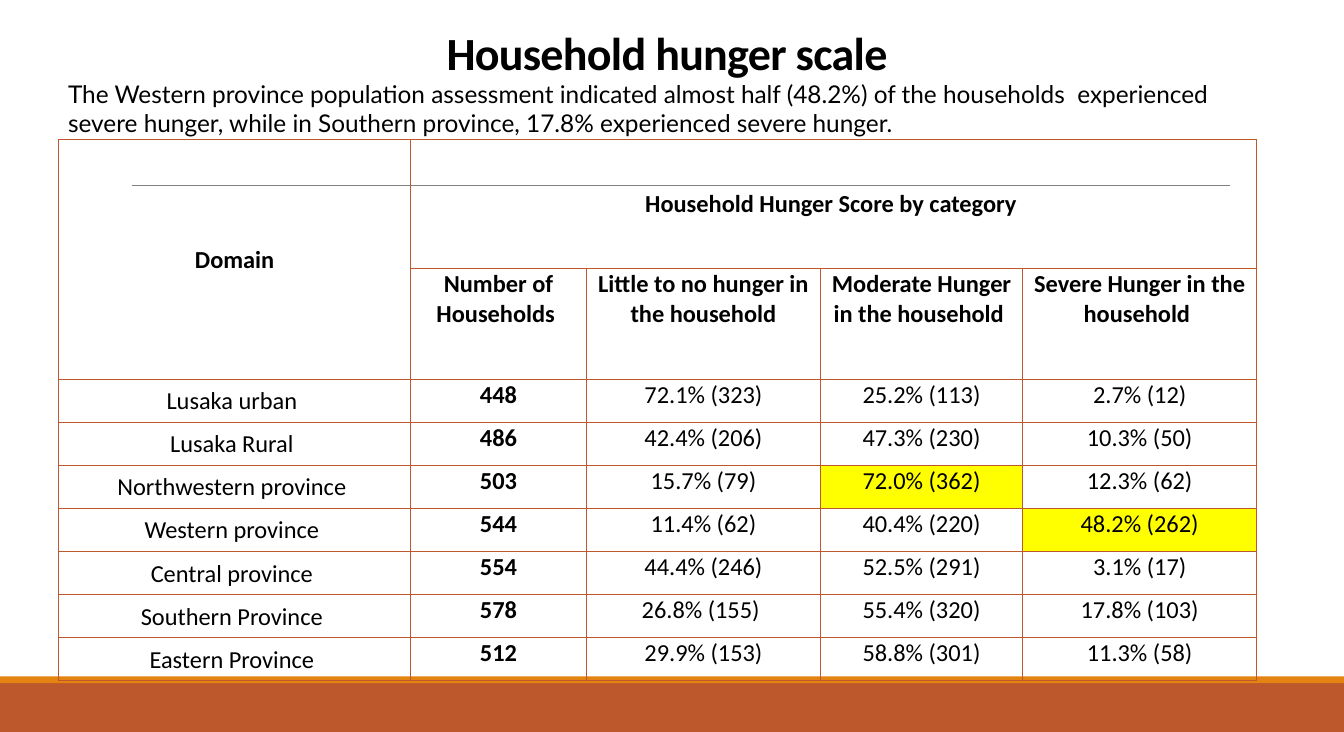
import pptx
import pptx.dml.color
import pptx.enum.shapes
import pptx.enum.text
import pptx.oxml
import pptx.oxml.ns
import pptx.util

Pt = pptx.util.Pt
ALIGN = pptx.enum.text.PP_ALIGN
ANCHOR = pptx.enum.text.MSO_ANCHOR
SHAPE = pptx.enum.shapes.MSO_SHAPE
LINK = pptx.enum.shapes.MSO_CONNECTOR

WIDTH, HEIGHT = 992.13, 540
COLORS = {"rust": "BD582C", "orange": "E48312", "gray": "808080",
          "black": "000000", "mark": "FFFF00"}
COLS = [260, 129.6, 173, 149, 173]
ROWS = [95, 82] + [31.75] * 7
HEADS = ["Number of Households ", "Little to no hunger in the household",
         "Moderate Hunger in the household ", "Severe Hunger in the household "]
DATA = [
    ("Lusaka urban ", "448", "72.1% (323)", "25.2% (113)", "2.7% (12)"),
    ("Lusaka Rural ", "486", "42.4% (206)", "47.3% (230)", "10.3% (50)"),
    ("Northwestern province ", "503", "15.7% (79)", "72.0% (362)", "12.3% (62)"),
    ("Western province ", "544", "11.4% (62)", "40.4% (220)", "48.2% (262)"),
    ("Central province ", "554", "44.4% (246)", "52.5% (291)", "3.1% (17)"),
    ("Southern Province ", "578", "26.8% (155) ", "55.4% (320)", "17.8% (103)"),
    ("Eastern Province ", "512", "29.9% (153)", "58.8% (301)", "11.3% (58)"),
]
MARKED = {"72.0% (362)", "48.2% (262)"}
SUMMARY = ("The Western province population assessment indicated almost half "
           "(48.2%) of the households  experienced severe hunger, while in "
           "Southern province, 17.8% experienced severe hunger.")


def color(name):
    return pptx.dml.color.RGBColor.from_string(COLORS[name])


def write(frame, text, font="Calibri", size=18, bold=False,
          align=ALIGN.LEFT, lead=None, track=None):
    """Fill a text frame; lead is line spacing, track is letter spacing."""
    frame.word_wrap = True
    para = frame.paragraphs[0]
    para.alignment = align
    if lead:
        para.line_spacing = Pt(lead)
    run = para.add_run()
    run.text = text
    run.font.name = font
    run.font.size = Pt(size)
    run.font.bold = bold
    run.font.color.rgb = color("black")
    if track:
        run.font._element.set("spc", str(int(track * 100)))


def add_bar(slide, x, y, w, h, fill):
    bar = slide.shapes.add_shape(SHAPE.RECTANGLE, Pt(x), Pt(y), Pt(w), Pt(h))
    bar.shadow.inherit = False
    bar.fill.solid()
    bar.fill.fore_color.rgb = color(fill)
    bar.line.fill.background()


def add_base(slide, x, y, w, h):
    """Draw the footer band with its thin top stripe."""
    stripe = 5
    add_bar(slide, x, y + stripe, w, h - stripe, "rust")
    add_bar(slide, x, y, w, stripe, "orange")


def add_rule(slide, x, y, w):
    rule = slide.shapes.add_connector(LINK.STRAIGHT, Pt(x), Pt(y), Pt(x + w), Pt(y))
    rule.line.color.rgb = color("gray")
    rule.line.width = Pt(0.5)
    props = rule._element.spPr
    props.append(pptx.oxml.parse_xml(
        f'<a:effectLst {pptx.oxml.ns.nsdecls("a")}/>'))


def add_text(slide, x, y, w, h, text, anchor=ANCHOR.TOP, **style):
    box = slide.shapes.add_textbox(Pt(x), Pt(y), Pt(w), Pt(h))
    box.text_frame.vertical_anchor = anchor
    write(box.text_frame, text, **style)


def add_edges(cell):
    props = cell._tc.get_or_add_tcPr()
    for side in "LRTB":
        props.append(pptx.oxml.parse_xml(
            f'<a:ln{side} {pptx.oxml.ns.nsdecls("a")} w="{Pt(1)}"><a:solidFill>'
            f'<a:srgbClr val="{COLORS["rust"]}"/></a:solidFill></a:ln{side}>'))


def set_cell(cell, text, bold=False, middle=False):
    cell.vertical_anchor = ANCHOR.MIDDLE if middle else ANCHOR.TOP
    write(cell.text_frame, text, bold=bold, align=ALIGN.CENTER)
    if text in MARKED:
        cell.fill.solid()
        cell.fill.fore_color.rgb = color("mark")


def add_scores(slide, x, y, w, h):
    frame = slide.shapes.add_table(len(ROWS), len(COLS), Pt(x), Pt(y), Pt(w), Pt(h))
    table = frame.table
    table.first_row = table.horz_banding = False
    for col, width in zip(table.columns, COLS):
        col.width = Pt(width)
    for row, height in zip(table.rows, ROWS):
        row.height = Pt(height)
    for cell in table.iter_cells():
        cell.margin_left = cell.margin_right = cell.margin_top = Pt(0.7)
        cell.margin_bottom = 0
        add_edges(cell)
        cell.fill.background()

    table.cell(0, 0).merge(table.cell(1, 0))
    table.cell(0, 1).merge(table.cell(0, 4))
    set_cell(table.cell(0, 0), "Domain", bold=True, middle=True)
    set_cell(table.cell(0, 1), "Household Hunger Score by category ",
             bold=True, middle=True)
    for c, head in enumerate(HEADS, 1):
        set_cell(table.cell(1, c), head, bold=True)
    for r, record in enumerate(DATA, 2):
        for c, value in enumerate(record):
            set_cell(table.cell(r, c), value, bold=c == 1, middle=c == 0)


def main():
    deck = pptx.Presentation()
    deck.slide_width, deck.slide_height = Pt(WIDTH), Pt(HEIGHT)
    slide = deck.slides.add_slide(deck.slide_layouts[6])
    add_base(slide, 0, 499, WIDTH, HEIGHT - 499)
    add_rule(slide, 97.2, 136.8, 810.7)
    add_text(slide, 64, 13.7, 864, 49, "Household hunger scale ",
             anchor=ANCHOR.BOTTOM, size=34, bold=True, align=ALIGN.CENTER,
             lead=32, track=-0.5)
    add_scores(slide, 43.2, 103, sum(COLS), sum(ROWS))
    add_text(slide, 43.2, 54.7, 892, 51, SUMMARY, font="Lato")
    deck.save("out.pptx")


if __name__ == "__main__":
    main()
